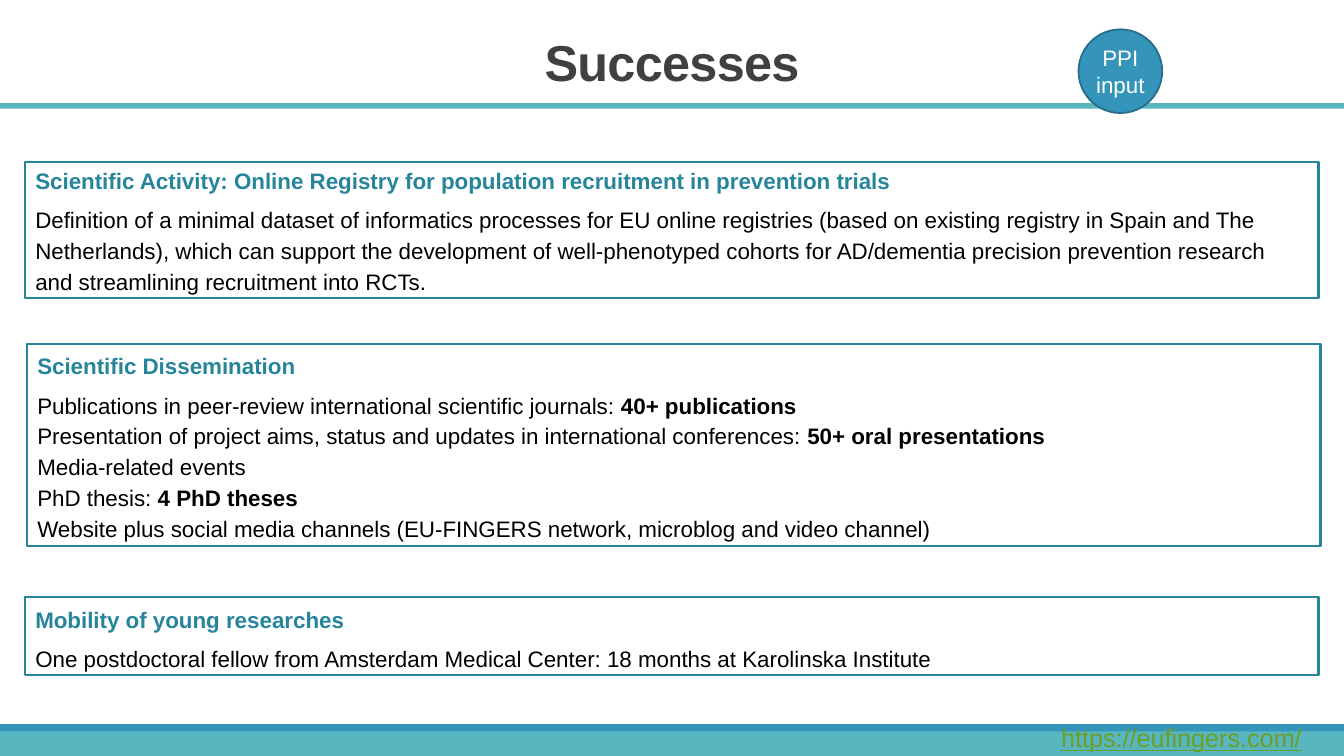
from pptx import Presentation
from pptx import util as u
from pptx.dml.color import RGBColor
from pptx.enum import shapes, text

Cm, Pt = u.Cm, u.Pt
RECT, OVAL = shapes.MSO_SHAPE.RECTANGLE, shapes.MSO_SHAPE.OVAL
TEAL = "27859B"


def add_shape(kind, x, y, w, h, fill, line=None, width=1.5):
    sp = s.shapes.add_shape(kind, Cm(x), Cm(y), Cm(w), Cm(h))
    sp.shadow.inherit = False
    sp.fill.solid()
    sp.fill.fore_color.rgb = RGBColor.from_string(fill)
    if line:
        sp.line.color.rgb = RGBColor.from_string(line)
        sp.line.width = Pt(width)
    else:
        sp.line.fill.background()
    sp.text_frame.word_wrap = True
    return sp


def add_run(p, words, size, color, bold=False):
    r = p.add_run()
    r.text = words
    r.font.name = "Arial"
    r.font.size = Pt(size)
    r.font.bold = bold
    r.font.color.rgb = RGBColor.from_string(color)
    return r


prs = Presentation()
prs.slide_width, prs.slide_height = Cm(33.87), Cm(19.05)
s = prs.slides.add_slide(prs.slide_layouts[6])

for y, h, color in [(18.42, 0.63, "58B6C0"), (18.25, 0.18, "3494BA"), (2.6, 0.14, "58B6C0")]:
    add_shape(RECT, 0, y, 33.87, h, color)

tf = s.shapes.add_textbox(Cm(10.85), Cm(0.43), Cm(12.17), Cm(2)).text_frame
tf.word_wrap = True
tf.vertical_anchor = text.MSO_ANCHOR.BOTTOM
p = tf.paragraphs[0]
p.alignment = text.PP_ALIGN.CENTER
p.line_spacing = 0.85
r = add_run(p, "Successes", 36, "404040", True)
r.font._element.set("spc", "-50")

boxes = [
    (0.69, 8.66, 5.11, "Scientific Dissemination", [
        ("Publications in peer-review international scientific journals: ", "40+ publications"),
        ("Presentation of project aims, status and updates in international conferences: ",
         "50+ oral presentations"),
        ("Media-related events", ""),
        ("PhD thesis: ", "4 PhD theses"),
        ("Website plus social media channels (EU-FINGERS network, microblog and video channel)", ""),
    ]),
    (0.64, 15.05, 1.97, "Mobility of young researches", [
        ("One postdoctoral fellow from Amsterdam Medical Center: 18 months at Karolinska Institute", ""),
    ]),
    (0.64, 4.09, 3.43,
     "Scientific Activity: Online Registry for population recruitment in prevention trials", [
         ("Definition of a minimal dataset of informatics processes for EU online registries "
          "(based on existing registry in Spain and The Netherlands), which can support the "
          "development of well-phenotyped cohorts for AD/dementia precision prevention research "
          "and streamlining recruitment into RCTs.", ""),
     ]),
]
for x, y, h, heading, lines in boxes:
    tf = add_shape(RECT, x, y, 32.59, h, "FFFFFF", TEAL).text_frame
    tf.vertical_anchor = text.MSO_ANCHOR.TOP
    p = tf.paragraphs[0]
    p.alignment = text.PP_ALIGN.LEFT
    p.space_after = Pt(6)
    if not heading.startswith("Scientific Activity"):
        p.line_spacing = Pt(22)
    add_run(p, heading, 16, TEAL, True)
    for plain, strong in lines:
        p = tf.add_paragraph()
        p.alignment = text.PP_ALIGN.LEFT
        p.line_spacing = Pt(22)
        add_run(p, plain, 16, "000000")
        if strong:
            add_run(p, strong, 16, "000000", True)

tf = s.shapes.add_textbox(Cm(26.49), Cm(18.08), Cm(6.83), Cm(1.02)).text_frame
tf.word_wrap = True
r = add_run(tf.paragraphs[0], "https://eufingers.com/", 18, "6B9F25")
r.font.underline = True

tf = add_shape(OVAL, 27.18, 0.74, 2.11, 2.11, "3494BA", "266D8A", 1.25).text_frame
tf.margin_left = tf.margin_right = tf.margin_top = tf.margin_bottom = Cm(0.1)
tf.vertical_anchor = text.MSO_ANCHOR.MIDDLE
p = tf.paragraphs[0]
p.alignment = text.PP_ALIGN.CENTER
add_run(p, "PPI input", 16, "FFFFFF")

prs.save("out.pptx")
